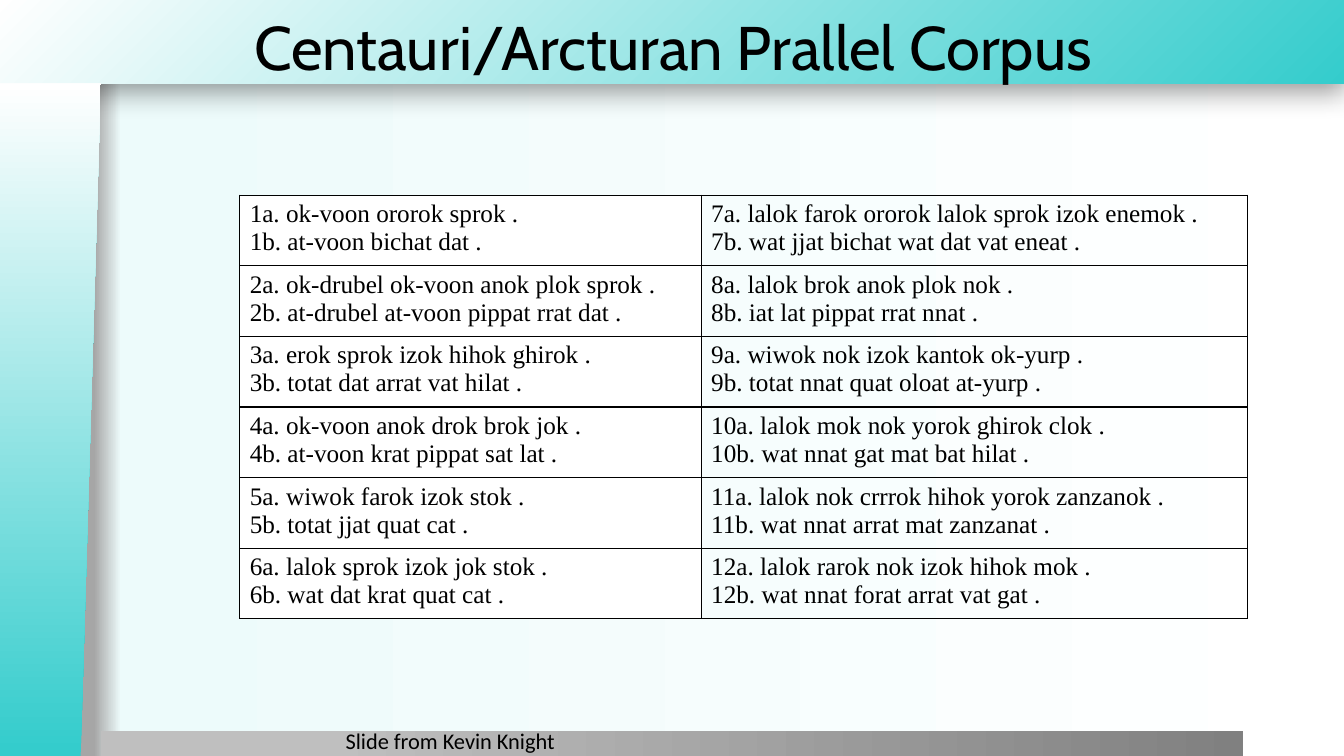
import pptx
import pptx.util
import pptx.dml.color
import pptx.enum.shapes
import pptx.enum.text
import pptx.oxml
import pptx.oxml.ns
from dataclasses import dataclass

Cm = pptx.util.Cm
Pt = pptx.util.Pt
MSO_SHAPE = pptx.enum.shapes.MSO_SHAPE
MSO_AUTO_SIZE = pptx.enum.text.MSO_AUTO_SIZE
qn = pptx.oxml.ns.qn
NS = pptx.oxml.ns.nsdecls("a")


@dataclass(frozen=True)
class Theme:
    teal: str = "34CCCC"
    mist: str = "EDFBFB"
    white: str = "FFFFFF"
    black: str = "000000"
    edge: str = "A6A6A6"
    bar_light: str = "BFBFBF"
    bar_dark: str = "808080"
    title_font: str = "Cabin"
    note_font: str = "Calibri"
    table_font: str = "Times New Roman"
    title_size: int = 44
    note_size: int = 16
    table_size: int = 18
    border: int = 1


@dataclass(frozen=True)
class Box:
    x: float
    y: float
    w: float
    h: float

    def place(self):
        return Cm(self.x), Cm(self.y), Cm(self.w), Cm(self.h)


THEME = Theme()
SLIDE = Box(0, 0, 33.87, 19.05)
LINEAR = '<a:lin ang="0" scaled="0"/>'
FROM_CORNER = '<a:path path="circle"><a:fillToRect l="100000" t="100000"/></a:path>'

CORPUS = [
    ("ok-voon ororok sprok .", "at-voon bichat dat ."),
    ("ok-drubel ok-voon anok plok sprok .", "at-drubel at-voon pippat rrat dat ."),
    ("erok sprok izok hihok ghirok .", "totat dat arrat vat hilat ."),
    ("ok-voon anok drok brok jok .", "at-voon krat pippat sat lat ."),
    ("wiwok farok izok stok .", "totat jjat quat cat ."),
    ("lalok sprok izok jok stok .", "wat dat krat quat cat ."),
    ("lalok farok ororok lalok sprok izok enemok .", "wat jjat bichat wat dat vat eneat ."),
    ("lalok brok anok plok nok .", "iat lat pippat rrat nnat ."),
    ("wiwok nok izok kantok ok-yurp .", "totat nnat quat oloat at-yurp ."),
    ("lalok mok nok yorok ghirok clok .", "wat nnat gat mat bat hilat ."),
    ("lalok nok crrrok hihok yorok zanzanok .", "wat nnat arrat mat zanzanat ."),
    ("lalok rarok nok izok hihok mok .", "wat nnat forat arrat vat gat ."),
]


def rgb(color):
    return pptx.dml.color.RGBColor.from_string(color)


def add_run(p, text, font, size):
    r = p.add_run()
    r.text = text
    r.font.name = font
    r.font.size = Pt(size)
    r.font.color.rgb = rgb(THEME.black)


def paint_gradient(fill, host, stops, direction=LINEAR):
    fill.gradient()
    marks = "".join(
        f'<a:gs pos="{pos * 1000}"><a:srgbClr val="{color}"/></a:gs>' for pos, color in stops
    )
    grad = pptx.oxml.parse_xml(
        f'<a:gradFill {NS} rotWithShape="1"><a:gsLst>{marks}</a:gsLst>{direction}</a:gradFill>'
    )
    old = host.find(".//" + qn("a:gradFill"))
    old.getparent().replace(old, grad)


def add_panel(s, kind, box, stops, direction=LINEAR):
    sp = s.shapes.add_shape(kind, *box.place())
    sp.shadow.inherit = False
    sp.line.fill.background()
    paint_gradient(sp.fill, sp._element.spPr, stops, direction)
    return sp


def add_background(s):
    stops = [(7, THEME.edge), (9, THEME.mist), (100, THEME.white)]
    paint_gradient(s.background.fill, s._element.cSld, stops)


def add_header(s, box, text):
    stops = [(0, THEME.teal), (100, THEME.white)]
    band = add_panel(s, MSO_SHAPE.RECTANGLE, box, stops, FROM_CORNER)
    shadow = pptx.oxml.parse_xml(
        f'<a:outerShdw {NS} blurRad="{Pt(20)}" dist="{Pt(6)}" dir="5400000" rotWithShape="0">'
        f'<a:srgbClr val="{THEME.black}"><a:alpha val="40000"/></a:srgbClr></a:outerShdw>'
    )
    band._element.spPr.find(qn("a:effectLst")).append(shadow)

    title = s.shapes.title
    s.shapes._spTree.append(title._element)
    title_box = Box(box.x + 6.15, box.y, 23.5, box.h + 0.23)
    title.left, title.top, title.width, title.height = title_box.place()
    tf = title.text_frame
    tf.auto_size = MSO_AUTO_SIZE.NONE
    tf.vertical_anchor = pptx.enum.text.MSO_ANCHOR.MIDDLE
    p = tf.paragraphs[0]
    p.alignment = pptx.enum.text.PP_ALIGN.LEFT
    add_run(p, text, THEME.title_font, THEME.title_size)


def add_side(s, box):
    turned = Box(box.x + (box.w - box.h) / 2, box.y + (box.h - box.w) / 2, box.h, box.w)
    stops = [(1, THEME.teal), (100, THEME.white)]
    sp = add_panel(s, MSO_SHAPE.FLOWCHART_MANUAL_INPUT, turned, stops)
    sp.rotation = 270
    sp._element.spPr.find(qn("a:xfrm")).set("flipV", "1")


def add_footer(s, box, text):
    stops = [(20, THEME.bar_light), (100, THEME.bar_dark)]
    add_panel(s, MSO_SHAPE.RECTANGLE, box, stops)
    note = Box(box.x + 5.92, box.y - 0.2, 5.8, 0.94)
    tf = s.shapes.add_textbox(*note.place()).text_frame
    tf.word_wrap = False
    tf.auto_size = MSO_AUTO_SIZE.SHAPE_TO_FIT_TEXT
    add_run(tf.paragraphs[0], text, THEME.note_font, THEME.note_size)


def add_borders(cell):
    tcPr = cell._tc.get_or_add_tcPr()
    for i, side in enumerate(("lnL", "lnR", "lnT", "lnB")):
        line = pptx.oxml.parse_xml(
            f'<a:{side} {NS} w="{Pt(THEME.border)}"><a:solidFill>'
            f'<a:srgbClr val="{THEME.black}"/></a:solidFill></a:{side}>'
        )
        tcPr.insert(i, line)


def add_corpus(s, box, pairs):
    rows = len(pairs) // 2
    table = s.shapes.add_table(rows, 2, *box.place()).table
    table.first_row = table.horz_banding = False
    left_width = 11.63
    table.columns[0].width = Cm(left_width)
    table.columns[1].width = Cm(box.w - left_width)
    for row in table.rows:
        row.height = Cm(box.h / rows)
    for i, pair in enumerate(pairs):
        col, row = divmod(i, rows)
        cell = table.cell(row, col)
        if col == 0:
            cell.fill.solid()
            cell.fill.fore_color.rgb = rgb(THEME.white)
        else:
            cell.fill.background()
        add_borders(cell)
        tf = cell.text_frame
        for p, letter, text in zip((tf.paragraphs[0], tf.add_paragraph()), "ab", pair):
            add_run(p, f"{i + 1}{letter}. {text}", THEME.table_font, THEME.table_size)


def main():
    prs = pptx.Presentation()
    prs.slide_width, prs.slide_height = Cm(SLIDE.w), Cm(SLIDE.h)
    s = prs.slides.add_slide(prs.slide_layouts[5])
    header_height = 2.1
    add_background(s)
    add_header(s, Box(0, 0, SLIDE.w, header_height), "Centauri/Arcturan Prallel Corpus")
    add_footer(s, Box(2.54, 18.41, 28.78, 0.64), "Slide from Kevin Knight")
    add_side(s, Box(0, header_height, 2.54, SLIDE.h - header_height))
    add_corpus(s, Box(6.04, 4.92, 25.4, 10.66), CORPUS)
    prs.save("out.pptx")


if __name__ == "__main__":
    main()
